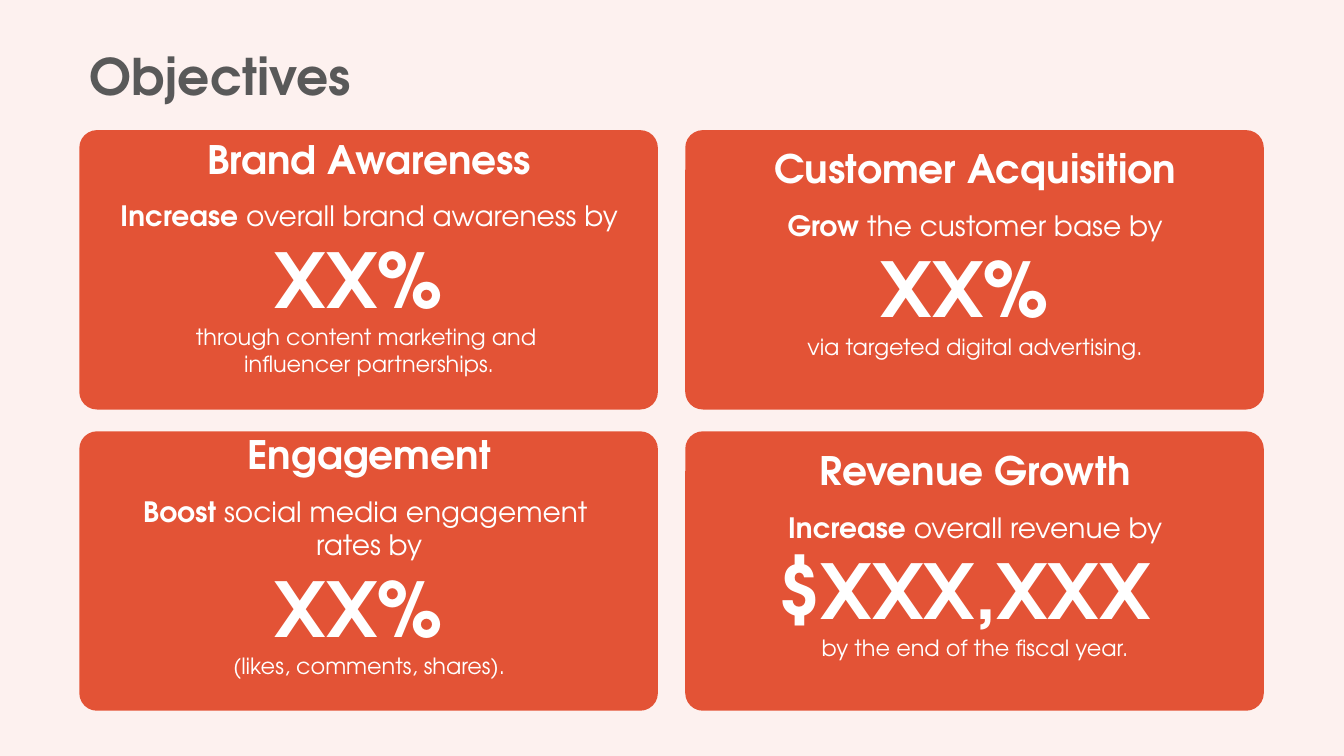
from dataclasses import dataclass

from lxml.etree import SubElement
from pptx import Presentation
from pptx.dml.color import RGBColor
from pptx.enum.shapes import MSO_SHAPE
from pptx.enum.text import MSO_AUTO_SIZE, PP_ALIGN
from pptx.oxml.ns import qn
from pptx.slide import Slide
from pptx.text.text import TextFrame, _Paragraph
from pptx.util import Cm, Pt

FONT = "TeX Gyre Adventor"
BACKGROUND = RGBColor(0xFD, 0xF1, 0xEF)
ORANGE = RGBColor(0xE3, 0x53, 0x36)
WHITE = RGBColor(0xFF, 0xFF, 0xFF)
GREY = RGBColor(0x59, 0x59, 0x59)

MARGIN_LEFT = 2.0
GRID_TOP = 3.28
CARD_WIDTH, CARD_HEIGHT = 14.58, 7.04
COLUMN_PITCH, ROW_PITCH = 15.27, 7.59
TEXT_INDENT, TEXT_WIDTH = 0.51, 13.59


@dataclass(frozen=True)
class Objective:
    heading: str
    verb: str
    goal: str
    target: str
    means: str
    text_offset: float  # from the card's top edge, in cm
    text_height: float


OBJECTIVES = [
    Objective("Brand Awareness", "Increase ", "overall brand awareness by", "XX% ",
              "through content marketing and \ninfluencer partnerships.", 0, 6.73),
    Objective("Customer Acquisition", "Grow ", "the customer base by", "XX% ",
              "via targeted digital advertising.", 0.24, 6.27),
    Objective("Engagement", "Boost ", "social media engagement \nrates by", "XX% ",
              "(likes, comments, shares).", -0.15, 7.11),
    Objective("Revenue Growth", "Increase ", "overall revenue by", "$XXX,XXX ",
              "by the end of the fiscal year.", 0.25, 6.27),
]


def add_text_frame(slide: Slide, left: float, top: float, width: float, height: float) -> TextFrame:
    frame = slide.shapes.add_textbox(Cm(left), Cm(top), Cm(width), Cm(height)).text_frame
    frame.word_wrap = True
    frame.auto_size = MSO_AUTO_SIZE.SHAPE_TO_FIT_TEXT
    return frame


def write(paragraph: _Paragraph, text: str, size: int, bold: bool, color: RGBColor = WHITE) -> None:
    """Fill the paragraph and give its runs and line breaks one style."""
    paragraph.text = text
    for run in paragraph.runs:
        font = run.font
        font.name, font.size, font.bold = FONT, Pt(size), bold
        font.color.rgb = color
    for line_break in paragraph._p.findall(qn("a:br")):
        SubElement(line_break, qn("a:rPr"), sz=str(size * 100))


def add_card(slide: Slide, left: float, top: float) -> None:
    card = slide.shapes.add_shape(MSO_SHAPE.ROUNDED_RECTANGLE, Cm(left), Cm(top),
                                  Cm(CARD_WIDTH), Cm(CARD_HEIGHT))
    card.adjustments[0] = 0.063
    card.shadow.inherit = False
    card.fill.solid()
    card.fill.fore_color.rgb = ORANGE
    card.line.fill.background()


def add_objective(slide: Slide, objective: Objective, left: float, top: float) -> None:
    add_card(slide, left, top)
    frame = add_text_frame(slide, left + TEXT_INDENT, top + objective.text_offset,
                           TEXT_WIDTH, objective.text_height)
    heading = frame.paragraphs[0]
    goal, target, means = (frame.add_paragraph() for _ in range(3))
    write(heading, objective.heading, 28, True)
    heading.space_before = heading.space_after = Pt(9)
    write(goal, objective.verb + objective.goal, 20, False)
    embolden_start(goal, objective)
    goal.space_before = Pt(3)
    write(target, objective.target, 54, True)
    write(means, objective.means, 16, False)
    for paragraph in frame.paragraphs:
        paragraph.alignment = PP_ALIGN.CENTER


def embolden_start(goal: _Paragraph, objective: Objective) -> None:
    """Split the verb off the first run, so that it alone is bold."""
    first = goal.runs[0]
    verb = goal.add_run()
    verb.text = objective.verb
    verb.font.name, verb.font.size, verb.font.bold = FONT, first.font.size, True
    verb.font.color.rgb = WHITE
    first.text = first.text.removeprefix(objective.verb)
    first._r.addprevious(verb._r)


def main() -> None:
    presentation = Presentation()
    presentation.slide_width, presentation.slide_height = Cm(33.87), Cm(19.05)
    slide = presentation.slides.add_slide(presentation.slide_layouts[6])
    slide.background.fill.solid()
    slide.background.fill.fore_color.rgb = BACKGROUND

    title = add_text_frame(slide, MARGIN_LEFT, 1.02, 23.62, 1.8)
    write(title.paragraphs[0], "Objectives", 36, True, GREY)

    for index, objective in enumerate(OBJECTIVES):
        row, column = divmod(index, 2)
        add_objective(slide, objective, MARGIN_LEFT + column * COLUMN_PITCH,
                      GRID_TOP + row * ROW_PITCH)
    presentation.save("out.pptx")


if __name__ == "__main__":
    main()
